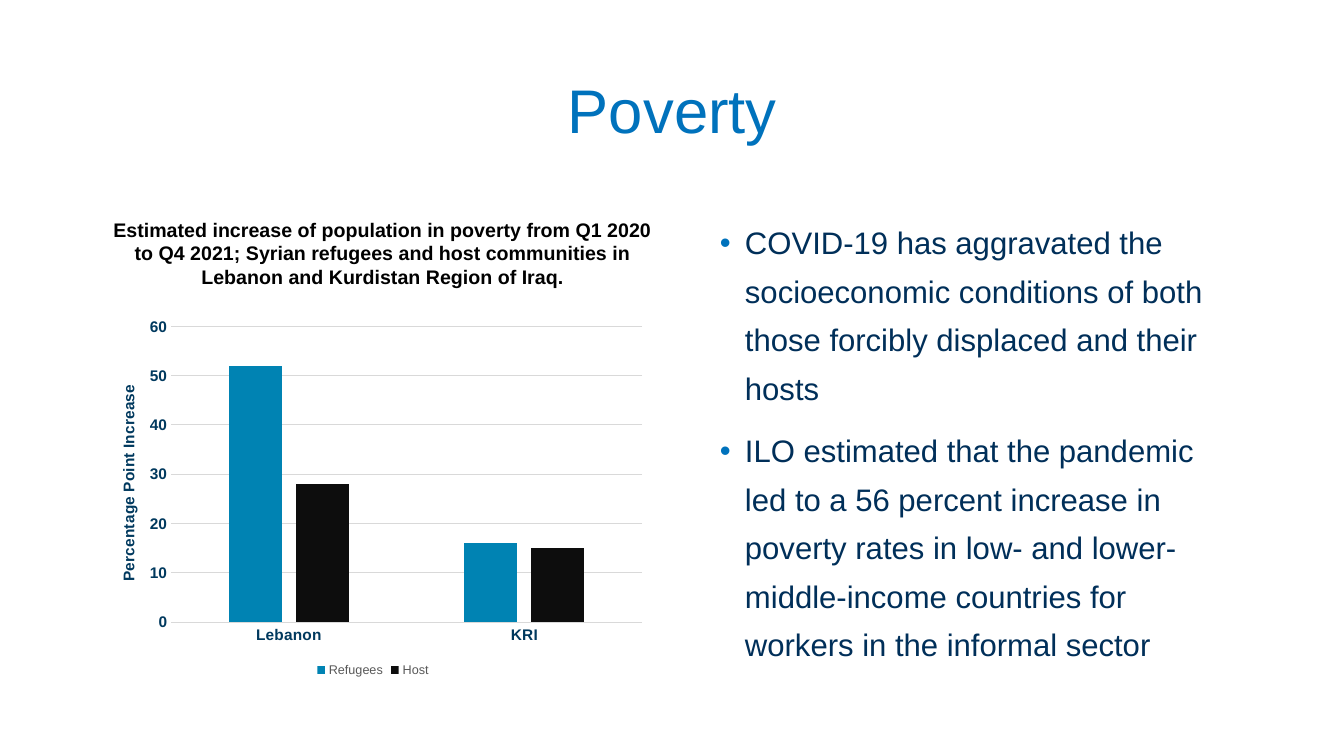
"""Build the Poverty slide: a column chart beside two bullet points."""
from dataclasses import dataclass

from pptx import Presentation
from pptx.chart.data import CategoryChartData
from pptx.dml.color import RGBColor as Rgb
from pptx.enum.chart import XL_CHART_TYPE as ChartType
from pptx.enum.chart import XL_LEGEND_POSITION as LegendSpot
from pptx.enum.chart import XL_TICK_MARK as TickMark
from pptx.enum.text import MSO_ANCHOR as Anchor
from pptx.enum.text import PP_ALIGN as Align
from pptx.oxml.ns import qn
from pptx.oxml.xmlchemy import OxmlElement as Element
from pptx.util import Inches, Pt


@dataclass(frozen=True)
class Theme:
    """Colours, type sizes and typeface of the slide."""
    face: str = "Arial"
    accent: str = "0072BC"
    body: str = "002F59"
    axis: str = "00395E"
    ink: str = "000000"
    grid: str = "D9D9D9"
    legend: str = "595959"
    refugees: str = "0083B3"
    host: str = "0D0D0D"
    title_size: float = 44
    body_size: float = 22.2
    caption_size: float = 14
    axis_size: float = 11
    chart_size: float = 10
    legend_size: float = 9


def apply(target, formats):
    """Set each attribute named in formats on target."""
    for name, value in formats.items():
        setattr(target, name, value)


def add_child(parent, tag, **attributes):
    """Append an XML element with the given attributes."""
    child = Element(tag)
    for name, value in attributes.items():
        child.set(name, str(value))
    parent.append(child)
    return child


class SlideBuilder:
    """Holds the theme and the current slide, and adds elements to it."""

    def __init__(self, slide, theme):
        """Keep the slide and theme."""
        self.slide = slide
        self.theme = theme

    def style(self, font, size, color, bold=False):
        """Give a font its face, size, weight and colour."""
        apply(font, {"name": self.theme.face, "size": Pt(size), "bold": bold})
        font.color.rgb = Rgb.from_string(color)

    def bullet(self, paragraph):
        """Give a paragraph a hanging accent-coloured bullet."""
        properties = paragraph._p.get_or_add_pPr()
        properties.set("marL", str(Inches(0.25)))
        properties.set("indent", str(Inches(-0.25)))
        color = add_child(properties, "a:buClr")
        add_child(color, "a:srgbClr", val=self.theme.accent)
        add_child(properties, "a:buFont", typeface=self.theme.face)
        add_child(properties, "a:buChar", char="•")

    def text(self, box, paragraphs, size, color, bold=False, bullets=False,
             anchor=Anchor.TOP, **formats):
        """Add a wrapping text box of equally styled paragraphs."""
        frame = self.slide.shapes.add_textbox(*map(Inches, box)).text_frame
        apply(frame, {"word_wrap": True, "vertical_anchor": anchor})
        for index, wording in enumerate(paragraphs):
            paragraph = frame.add_paragraph() if index else frame.paragraphs[0]
            if bullets:
                self.bullet(paragraph)
            apply(paragraph, formats)
            if index:
                paragraph.space_before = Pt(10)
            run = paragraph.add_run()
            run.text = wording
            self.style(run.font, size, color, bold)

    def place(self, parent, **fractions):
        """Fix a chart part at fractions of the chart area."""
        layout = parent.find(qn("c:layout"))
        if layout is None:
            layout = Element("c:layout")
            parent.insert(0, layout)
        manual = add_child(layout, "c:manualLayout")
        if "w" in fractions:
            add_child(manual, "c:layoutTarget", val="inner")
        for mode in ("xMode", "yMode"):
            add_child(manual, f"c:{mode}", val="edge")
        for name, value in fractions.items():
            add_child(manual, f"c:{name}", val=value)

    def grid_line(self, line):
        """Draw a thin grey chart line."""
        line.color.rgb = Rgb.from_string(self.theme.grid)
        line.width = Pt(0.75)

    def columns(self, box, categories, series, axis_title):
        """Add a clustered column chart; series maps name to values and colour."""
        theme = self.theme
        data = CategoryChartData()
        data.categories = categories
        for name, (values, _) in series.items():
            data.add_series(name, values)
        chart = self.slide.shapes.add_chart(
            ChartType.COLUMN_CLUSTERED, *map(Inches, box), data).chart
        apply(chart, {"has_title": False, "has_legend": True})
        self.style(chart.font, theme.chart_size, theme.ink)
        apply(chart.legend, {"position": LegendSpot.BOTTOM,
                             "include_in_layout": False})
        self.style(chart.legend.font, theme.legend_size, theme.legend)

        plot = chart.plots[0]
        apply(plot, {"gap_width": 219, "overlap": -27,
                     "vary_by_categories": False})
        for column, (_, color) in zip(plot.series, series.values()):
            column.format.fill.solid()
            column.format.fill.fore_color.rgb = Rgb.from_string(color)

        for axis in (chart.category_axis, chart.value_axis):
            apply(axis, {"major_tick_mark": TickMark.NONE,
                         "minor_tick_mark": TickMark.NONE})
            self.style(axis.tick_labels.font, theme.axis_size, theme.axis, True)
        self.grid_line(chart.category_axis.format.line)
        scale = chart.value_axis
        apply(scale, {"minimum_scale": 0, "maximum_scale": 60, "major_unit": 10,
                      "has_major_gridlines": True})
        scale.format.line.fill.background()
        self.grid_line(scale.major_gridlines.format.line)
        heading = scale.axis_title.text_frame.paragraphs[0].add_run()
        heading.text = axis_title
        self.style(heading.font, theme.axis_size, theme.axis, True)

        area = chart._chartSpace.find(f".//{qn('c:plotArea')}")
        self.place(area, x=0.14, y=0.04, w=0.84, h=0.8)
        self.place(area.find(f".//{qn('c:title')}"), x=0.04, y=0.19)


def main():
    """Build and save the slide."""
    deck = Presentation()
    apply(deck, {"slide_width": Inches(13.33), "slide_height": Inches(7.5)})
    theme = Theme()
    page = SlideBuilder(deck.slides.add_slide(deck.slide_layouts[6]), theme)
    page.text((0.92, 0.4, 11.5, 1.45), ["Poverty"], theme.title_size,
              theme.accent, anchor=Anchor.MIDDLE, alignment=Align.CENTER,
              line_spacing=0.9)
    page.text((7.04, 2.06, 5.38, 4.7), [
        "COVID-19 has aggravated the socioeconomic conditions of both those "
        "forcibly displaced and their hosts",
        "ILO estimated that the pandemic led to a 56 percent increase in "
        "poverty rates in low- and lower-middle-income countries for workers "
        "in the informal sector",
    ], theme.body_size, theme.body, bullets=True, line_spacing=1.3)
    page.columns((0.92, 3.09, 5.56, 3.67), ["Lebanon", "KRI"], {
        "Refugees": ((52, 16), theme.refugees),
        "Host": ((28, 15), theme.host),
    }, "Percentage Point Increase")
    page.text((0.92, 2.11, 5.75, 0.81), [
        "Estimated increase of population in poverty from Q1 2020 to Q4 2021; "
        "Syrian refugees and host communities in Lebanon and Kurdistan Region "
        "of Iraq.",
    ], theme.caption_size, theme.ink, bold=True, alignment=Align.CENTER)
    deck.save("out.pptx")


if __name__ == "__main__":
    main()
